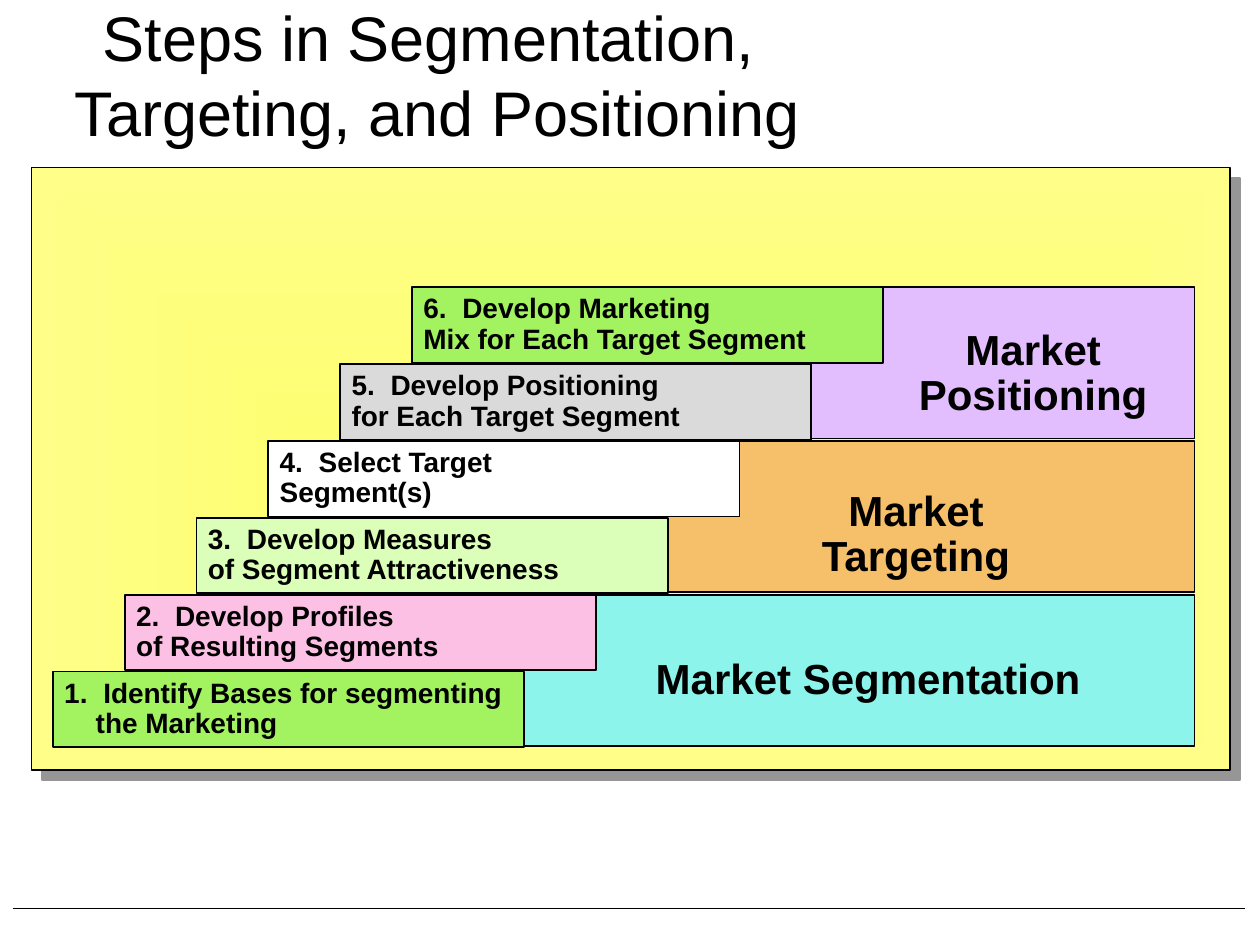
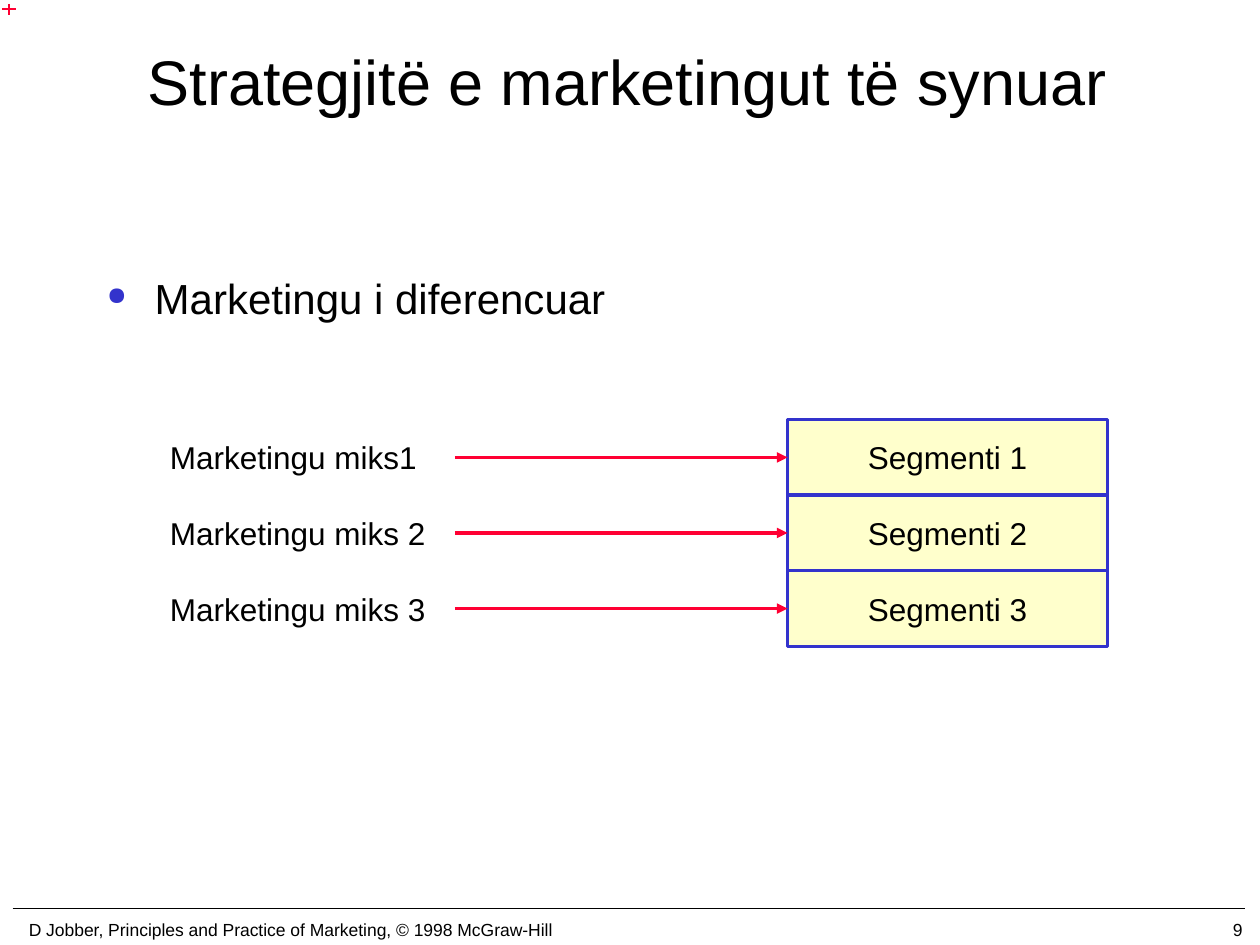
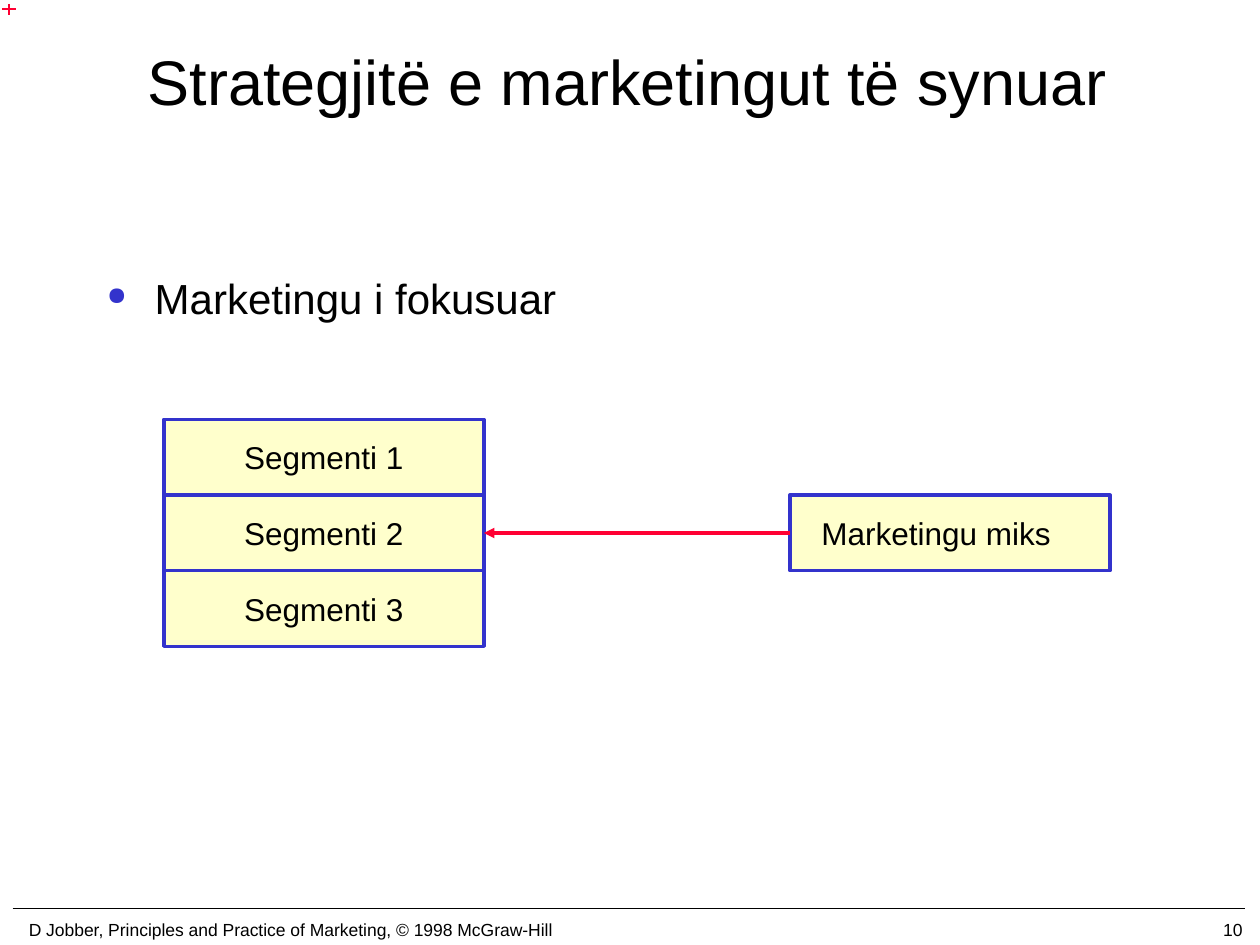
from lxml import etree
from pptx import Presentation
from pptx import util as u
from pptx.dml.color import RGBColor
from pptx.enum import shapes, text
from pptx.oxml import ns

BLACK = RGBColor(0, 0, 0)
BLUE = RGBColor(0x33, 0x33, 0xCC)
RED = RGBColor(0xFF, 0x00, 0x33)
CREAM = RGBColor(0xFF, 0xFF, 0xCC)
YELLOW = RGBColor(0xFE, 0xFE, 0x70)
PALE_YELLOW = RGBColor(0xFE, 0xFE, 0x88)
GREY = RGBColor(0x96, 0x96, 0x96)
GREEN = RGBColor(0xA3, 0xF2, 0x5F)
SILVER = RGBColor(0xDA, 0xDA, 0xDA)
WHITE = RGBColor(0xFF, 0xFF, 0xFF)
PALE_GREEN = RGBColor(0xDB, 0xFF, 0xB8)
PINK = RGBColor(0xFD, 0xC0, 0xE5)
LILAC = RGBColor(0xE3, 0xBE, 0xFF)
ORANGE = RGBColor(0xF6, 0xBF, 0x69)
AQUA = RGBColor(0x8C, 0xF4, 0xEA)

FONT = "Arial"
LEFT, CENTER, RIGHT = text.PP_ALIGN.LEFT, text.PP_ALIGN.CENTER, text.PP_ALIGN.RIGHT
TOP, MIDDLE = text.MSO_ANCHOR.TOP, text.MSO_ANCHOR.MIDDLE
FOOTER = "D Jobber, Principles and Practice of Marketing, © 1998 McGraw-Hill"

STEPS_TITLE = "Steps in Segmentation, \vTargeting, and Positioning"
STEPS = [
    (["6.\tDevelop Marketing", "Mix for Each Target Segment"], GREEN),
    (["5.\tDevelop Positioning", "for Each Target Segment"], SILVER),
    (["4.\tSelect Target", "Segment(s)"], WHITE),
    (["3.\tDevelop Measures", "of Segment Attractiveness"], PALE_GREEN),
    (["2.\tDevelop Profiles", "of Resulting Segments"], PINK),
    (["1.\tIdentify Bases for segmenting", "the Marketing"], GREEN),
]
STAGES = [
    (["Market", "Positioning"], LILAC, (8.2, 2.97)),
    (["Market", "Targeting"], ORANGE, (7.27, 4.25)),
    (["Market Segmentation"], AQUA, (6.89, 5.4)),
]
STRATEGY_TITLE = "Strategjitë e marketingut të synuar"
SEGMENTS = ["Segmenti 1", "Segmenti 2", "Segmenti 3"]
MIXES = ["Marketingu miks1", "Marketingu miks 2", "Marketingu miks 3"]

STAIR_TOP, STEP_PITCH, STEP_HEIGHT = 2.28, 0.61, 0.6
STEP_LEFT, STEP_SHIFT, STEP_WIDTH = 0.42, 0.57, 3.74
SEGMENT_TOP, SEGMENT_WIDTH, SEGMENT_HEIGHT = 3.33, 2.54, 0.6


def inches(*lengths):
    return [u.Inches(length) for length in lengths]


def write(shape, lines, size, align=LEFT, anchor=MIDDLE, bold=False,
          spacing=None, inset=(0.1, 0.05)):
    frame = shape.text_frame
    frame.word_wrap = True
    frame.vertical_anchor = anchor
    frame.margin_left = frame.margin_right = u.Inches(inset[0])
    frame.margin_top = frame.margin_bottom = u.Inches(inset[1])
    for index, line in enumerate(lines):
        para = frame.add_paragraph() if index else frame.paragraphs[0]
        para.text = line
        para.alignment = align
        para.line_spacing = spacing
        if "\t" in line:
            tabs = etree.SubElement(para._p.get_or_add_pPr(), ns.qn("a:tabLst"))
            etree.SubElement(tabs, ns.qn("a:tab"), pos=str(u.Inches(0.31)), algn="l")
        para.font.name = FONT
        para.font.size = u.Pt(size)
        para.font.bold = bold
        para.font.color.rgb = BLACK
    return frame


def add_text(page, at, lines, size, **style):
    box = page.shapes.add_textbox(*inches(*at))
    write(box, lines, size, **style)


def add_box(page, at, fill, line=BLACK, width=1):
    box = page.shapes.add_shape(shapes.MSO_SHAPE.RECTANGLE, *inches(*at))
    box.shadow.inherit = False
    box.fill.solid()
    box.fill.fore_color.rgb = fill
    box.line.color.rgb = line
    box.line.width = u.Pt(width)
    return box


def add_line(page, start, end, color, width, arrow=False):
    line = page.shapes.add_connector(
        shapes.MSO_CONNECTOR.STRAIGHT, *inches(*start, *end))
    line.line.color.rgb = color
    line.line.width = u.Pt(width)
    if arrow:
        etree.SubElement(line.line._get_or_add_ln(), ns.qn("a:tailEnd"), type="triangle")
    etree.SubElement(line._element.spPr, ns.qn("a:effectLst"))
    return line


def add_page(deck, title, title_at):
    page = deck.slides.add_slide(deck.slide_layouts[6])
    add_line(page, (0.1, 7.21), (9.88, 7.21), BLACK, 1)
    add_text(page, title_at, [title], 36, align=CENTER)
    return page


def add_strategy_page(deck, number, topic):
    page = add_page(deck, STRATEGY_TITLE, (0.73, 0.01, 8.5, 1.25))
    add_text(page, (7.88, 7.25, 2.08, 0.25), [str(number)], 10, align=RIGHT)
    add_text(page, (0, 7.25, 4.61, 0.25), [FOOTER], 10, align=CENTER)
    add_line(page, (0.07, 0.03), (0.07, 0.12), RED, 1)
    add_line(page, (0.02, 0.07), (0.13, 0.07), RED, 1)

    body = page.shapes.add_textbox(*inches(0.75, 1.83, 8.5, 0.88))
    para = write(body, [topic], 24, anchor=TOP, spacing=1.7).paragraphs[0]
    props = para._p.get_or_add_pPr()
    props.set("marL", str(u.Inches(0.38)))
    props.set("indent", str(u.Inches(-0.38)))
    bullet_color = etree.Element(ns.qn("a:buClr"))
    etree.SubElement(bullet_color, ns.qn("a:srgbClr"), val=str(BLUE))
    bullet_size = etree.Element(ns.qn("a:buSzPct"), val="60000")
    bullet = etree.Element(ns.qn("a:buChar"), char="●")
    default_font = props.find(ns.qn("a:defRPr"))
    for part in (bullet_color, bullet_size, bullet):
        default_font.addprevious(part)
    return page


def add_segments(page, left):
    boxes = []
    for row, name in enumerate(SEGMENTS):
        top = SEGMENT_TOP + row * SEGMENT_HEIGHT
        box = add_box(page, (left, top, SEGMENT_WIDTH, SEGMENT_HEIGHT), CREAM, BLUE, 2)
        write(box, [name], 18, align=CENTER)
        boxes.append(box)
    return boxes


def add_panel(page):
    panel = add_box(page, (0.25, 1.33, 9.51, 4.78), YELLOW)
    panel.fill.gradient()
    for stop, color in zip(panel.fill.gradient_stops, (YELLOW, PALE_YELLOW)):
        stop.color.rgb = color
    props = panel._element.spPr
    gradient = props.find(ns.qn("a:gradFill"))
    gradient.remove(gradient.find(ns.qn("a:lin")))
    shade = etree.SubElement(gradient, ns.qn("a:path"))
    shade.set("path", "shape")
    etree.SubElement(shade, ns.qn("a:fillToRect"),
                     {side: "50000" for side in "ltrb"})
    shadow = etree.SubElement(props.find(ns.qn("a:effectLst")), ns.qn("a:outerShdw"),
                              dist=str(u.Pt(8.5)), dir="2700000", algn="ctr")
    etree.SubElement(shadow, ns.qn("a:srgbClr"), val=str(GREY))


def build_steps(deck):
    page = add_page(deck, STEPS_TITLE, (0.24, -0.02, 6.46, 1.21))
    add_panel(page)
    style = dict(bold=True, spacing=0.9, inset=(0.09, 0.04))
    for row, (lines, fill, (middle_x, middle_y)) in enumerate(STAGES):
        add_box(page, (4.12, STAIR_TOP + row * 2 * STEP_PITCH, 5.36, 1.2), fill)
        width, height = 3.8, 0.81
        add_text(page, (middle_x - width / 2, middle_y - height / 2, width, height),
                 lines, 24, align=CENTER, **style)
    for row, (lines, fill) in enumerate(STEPS):
        left = STEP_LEFT + (len(STEPS) - 1 - row) * STEP_SHIFT
        top = STAIR_TOP + row * STEP_PITCH
        box = add_box(page, (left, top, STEP_WIDTH, STEP_HEIGHT), fill)
        frame = write(box, lines, 16, **style)
    frame.paragraphs[1]._p.get_or_add_pPr().set("marL", str(u.Inches(0.25)))


def build_differentiated(deck):
    page = add_strategy_page(deck, 9, "Marketingu i diferencuar")
    for row, (mix, box) in enumerate(zip(MIXES, add_segments(page, 6.25))):
        top = SEGMENT_TOP + row * SEGMENT_HEIGHT
        middle = top + SEGMENT_HEIGHT / 2
        add_text(page, (1.25, top, 2.25, SEGMENT_HEIGHT), [mix], 18)
        arrow = add_line(page, (3.61, middle), (6.25, middle), RED, 2, arrow=True)
        arrow.end_connect(box, 1)


def build_focused(deck):
    page = add_strategy_page(deck, 10, "Marketingu i fokusuar")
    target = add_segments(page, 1.3)[1]
    top = SEGMENT_TOP + SEGMENT_HEIGHT
    middle = top + SEGMENT_HEIGHT / 2
    mix = add_box(page, (6.27, top, SEGMENT_WIDTH, SEGMENT_HEIGHT), CREAM, BLUE, 2)
    write(mix, ["Marketingu miks"], 18, inset=(0.25, 0.05))
    arrow = add_line(page, (6.27, middle), (3.84, middle), RED, 2, arrow=True)
    arrow.begin_connect(mix, 1)
    arrow.end_connect(target, 3)


def main():
    deck = Presentation()
    deck.slide_width, deck.slide_height = inches(10, 7.5)
    build_steps(deck)
    build_differentiated(deck)
    build_focused(deck)
    deck.save("out.pptx")


if __name__ == "__main__":
    main()
